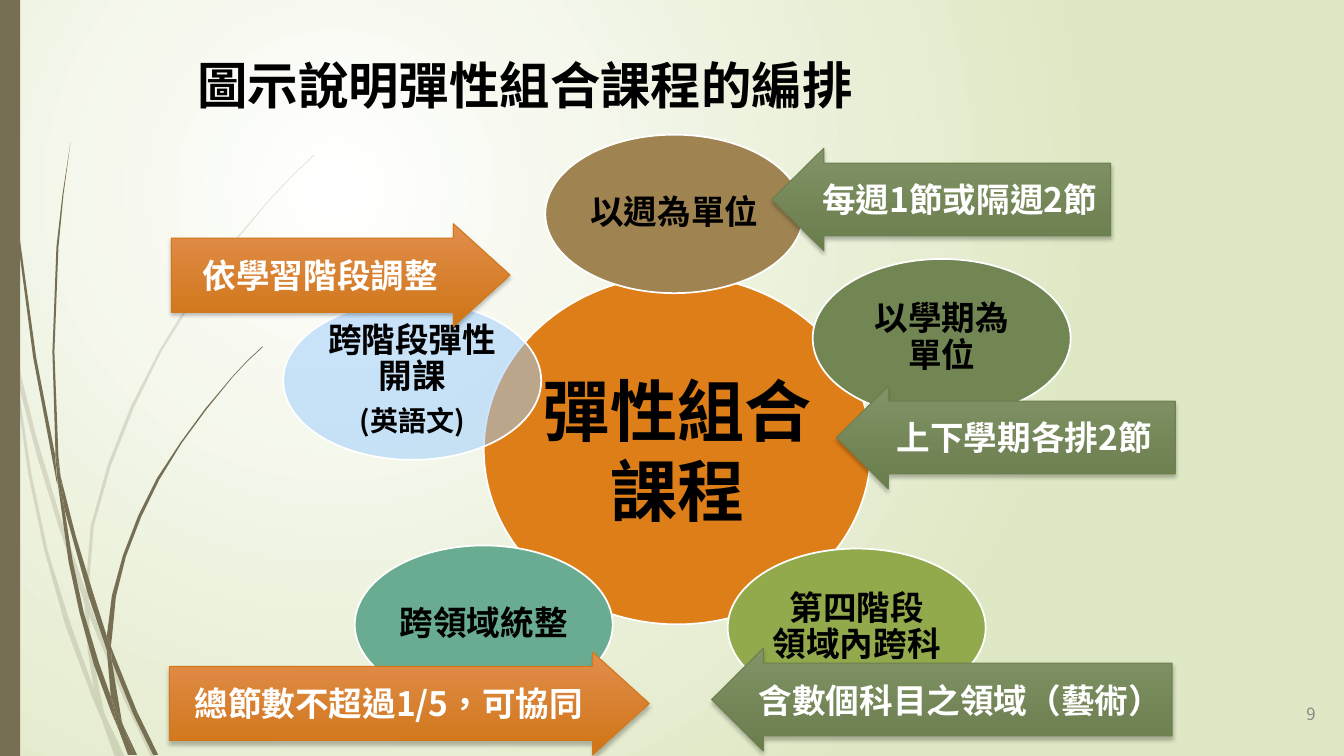
"""Build the slide on how flexible combined courses are arranged."""
from dataclasses import dataclass

from lxml import etree
from pptx import Presentation
from pptx.dml.color import RGBColor
from pptx.enum.shapes import MSO_SHAPE
from pptx.enum.text import MSO_ANCHOR, PP_ALIGN
from pptx.oxml import parse_xml
from pptx.oxml.ns import nsdecls, qn
from pptx.util import Pt

OVAL, RECT = MSO_SHAPE.OVAL, MSO_SHAPE.RECTANGLE
LEFT, RIGHT = MSO_SHAPE.LEFT_ARROW, MSO_SHAPE.RIGHT_ARROW
MID, TOP = MSO_ANCHOR.MIDDLE, MSO_ANCHOR.TOP
START, CENTER, END = PP_ALIGN.LEFT, PP_ALIGN.CENTER, PP_ALIGN.RIGHT
FONT = "Noto Sans CJK SC"
BLACK, WHITE, GREY, BARK = "000000", "FFFFFF", "888888", "766F54"
UNIT = Pt(0.72)

PALE = (
    (11, 350, 9, 322, 0, 282, 0, 299, 10, 344),
    (58, 522, 84, 599, 85, 586, 62, 520, 36, 433, 14, 345, 17, 376, 36, 450),
    (92, 607, 88, 596, 88, 610, 123, 694, 150, 751, 155, 751, 127, 692),
    (119, 751, 124, 751, 105, 711),
    (93, 683, 70, 619, 47, 545, 31, 469, 17, 376, 11, 350, 28, 470, 44, 546,
     65, 621, 92, 693, 101, 714, 99, 707),
    (84, 599, 87, 646, 93, 683, 96, 692, 105, 711, 103, 706, 91, 646, 88, 610, 88, 608),
    (88, 584, 93, 522, 110, 462, 133, 404, 160, 349, 193, 296, 229, 245, 268, 198,
     290, 175, 312, 154, 312, 153, 289, 175, 268, 197, 228, 244, 191, 294, 158, 348,
     130, 403, 107, 461, 90, 522, 85, 584, 85, 586, 88, 596),
    (101, 714, 114, 751, 119, 751),
    (88, 608, 88, 610, 88, 596, 85, 586, 84, 599),
    (96, 692, 93, 683, 99, 707, 101, 714, 119, 751, 105, 711),
)
DARK = (
    (7, 110, 17, 233, 33, 355, 56, 477, 57, 481, 55, 457, 55, 453, 36, 355, 19, 232,
     8, 109, 5, 48, 4, 0, 3, 0, 4, 48),
    (88, 592, 106, 645, 106, 633, 106, 631, 93, 590, 75, 531, 60, 472, 64, 505),
    (113, 649, 110, 641, 111, 656, 132, 708, 152, 749, 157, 749, 136, 706),
    (110, 691, 98, 657, 83, 607, 72, 556, 64, 505, 57, 477, 68, 557, 79, 608,
     93, 659, 111, 708, 117, 722, 116, 717),
    (60, 472, 58, 453, 54, 349, 58, 245, 63, 193, 70, 141, 62, 193, 56, 245,
     52, 349, 55, 449, 60, 472),
    (133, 749, 136, 749, 122, 719),
    (57, 477, 64, 505, 60, 472, 55, 449, 55, 453),
    (111, 633, 115, 592, 125, 552, 140, 513, 158, 476, 180, 440, 205, 406, 231, 374,
     245, 359, 261, 344, 260, 344, 245, 358, 231, 373, 204, 405, 179, 439, 156, 474,
     137, 512, 122, 551, 111, 591, 106, 631, 110, 641),
    (117, 722, 127, 749, 131, 749),
    (106, 645, 110, 691, 116, 706, 122, 719, 121, 716, 111, 656, 109, 651),
    (106, 645, 109, 651, 111, 656, 110, 641, 106, 631, 106, 633),
    (116, 706, 110, 691, 116, 717, 117, 722, 130, 749, 133, 749, 122, 719),
)


@dataclass
class Line:
    text: str
    size: float = 24


@dataclass
class Bubble:
    x: float
    y: float
    fill: str
    lines: tuple
    w: float = 184.3
    h: float = 113.2
    alpha: int = 100
    lead: float = 0.9


@dataclass
class Arrow:
    x: float
    y: float
    w: float
    kind: int
    text: str


BUBBLES = (
    Bubble(345.6, 196.6, "DE7E18", (Line("彈性組合課程", 48),), 276.5, 249.4, lead=1),
    Bubble(389.5, 96.2, "9F8351", (Line("以週為單位"),)),
    Bubble(580.5, 185, "728653", (Line("以學期為\v單位"),)),
    Bubble(519.8, 391.8, "92AA4C", (Line("第四階段\v領域內跨科"),)),
    Bubble(253.4, 389.6, "6AAC91", (Line("跨領域統整"),)),
    Bubble(202.3, 215.3, "99CCFF", (Line("跨階段彈性開課"), Line("(英語文)", 20)), alpha=50),
)
ARROWS = (
    Arrow(551.5, 105.8, 241.9, LEFT, "每週1節或隔週2節"),
    Arrow(597.6, 275.8, 241.9, LEFT, "上下學期各排2節"),
    Arrow(508.3, 463, 329, LEFT, "含數個科目之領域（藝術）"),
    Arrow(121, 465.8, 342.7, RIGHT, "總節數不超過1/5，可協同"),
    Arrow(122.4, 159.8, 241.9, RIGHT, "依學習階段調整"),
)
LOOKS = {
    LEFT: (("819367", "6A7D4D"), "6D804F", (0.708, 0.505)),
    RIGHT: (("E18D4C", "CF7516"), "D47817", (0.72, 0.551)),
}


def tint(color, code: str) -> None:
    """Set a colour from a hex string."""
    color.rgb = RGBColor.from_string(code)


def paint(shape, code: str, alpha: int = 100) -> None:
    """Fill a shape flat, with opacity in percent, and no shadow."""
    shape.shadow.inherit = False
    shape.fill.solid()
    tint(shape.fill.fore_color, code)
    if alpha < 100:
        node = shape._element.spPr.find(qn("a:solidFill"))[0]
        etree.SubElement(node, qn("a:alpha")).set("val", str(alpha * 1000))


def blend(fill, codes: tuple) -> None:
    """Fill with a gradient running down through two colours."""
    fill.gradient()
    fill.gradient_angle = 270
    for stop, code, place in zip(fill.gradient_stops, codes, (0, 1)):
        tint(stop.color, code)
        stop.position = place


def edge(shape, code: str, width: float) -> None:
    """Outline a shape."""
    tint(shape.line.color, code)
    shape.line.width = Pt(width)


def write(shape, lines: tuple, code: str, bold: bool = True, align=CENTER,
          anchor=MID, pad: tuple = (0, 0), lead: float = 1, gap: float = 0) -> None:
    """Write lines of text into a shape run by run."""
    frame = shape.text_frame
    frame.word_wrap, frame.vertical_anchor = True, anchor
    frame.margin_left = frame.margin_right = Pt(pad[0])
    frame.margin_top = frame.margin_bottom = Pt(pad[1])
    for i, line in enumerate(lines):
        para = frame.add_paragraph() if i else frame.paragraphs[0]
        para.alignment, para.line_spacing = align, lead
        if i < len(lines) - 1:
            para.space_after = Pt(gap)
        for j, part in enumerate(line.text.split("\v")):
            if j:
                para.add_line_break()
            run = para.add_run()
            run.text = part
            run.font.name, run.font.size, run.font.bold = FONT, Pt(line.size), bold
            tint(run.font.color, code)
            props = run._r.get_or_add_rPr()
            props.set("lang", "zh-TW")
            latin = props.find(qn("a:latin"))
            latin.addnext(parse_xml(f'<a:ea {nsdecls("a")} typeface="{FONT}"/>'))


def grow(shapes, blades: tuple, alpha: int) -> None:
    """Draw a tuft of grass as one group."""
    tuft = shapes.add_group_shape().shapes
    for blade in blades:
        dots = list(zip(blade[::2], blade[1::2]))
        pen = tuft.build_freeform(*dots[0], scale=UNIT)
        pen.add_line_segments(dots[1:], close=True)
        leaf = pen.convert_to_shape()
        paint(leaf, BARK, alpha)
        leaf.line.fill.background()


def place(shapes, kind: int, x: float, y: float, w: float, h: float):
    """Add a preset shape."""
    return shapes.add_shape(kind, Pt(x), Pt(y), Pt(w), Pt(h))


def point(shapes, arrow: Arrow) -> None:
    """Draw a block arrow with its soft shadow."""
    shape = place(shapes, arrow.kind, arrow.x, arrow.y, arrow.w, 73.4)
    codes, rim, bends = LOOKS[arrow.kind]
    for i, bend in enumerate(bends):
        shape.adjustments[i] = bend
    blend(shape.fill, codes)
    edge(shape, rim, 0.75)
    shape.shadow.inherit = False
    shape._element.spPr.find(qn("a:effectLst")).append(parse_xml(
        f'<a:outerShdw {nsdecls("a")} blurRad="{Pt(3)}" dist="{Pt(2)}" dir="5400000" '
        'rotWithShape="0"><a:srgbClr val="000000"><a:alpha val="25000"/></a:srgbClr>'
        '</a:outerShdw>'))
    write(shape, (Line(arrow.text),), WHITE, pad=(7.2, 3.6))


def main() -> None:
    """Build and save the slide."""
    deck = Presentation()
    deck.slide_width, deck.slide_height = Pt(960), Pt(540)
    slide = deck.slides.add_slide(deck.slide_layouts[6])
    shapes = slide.shapes
    blend(slide.background.fill, (WHITE, "DFE8C4"))
    lin = slide._element.find(".//" + qn("a:lin"))
    lin.getparent().replace(lin, parse_xml(
        f'<a:path {nsdecls("a")} path="circle"><a:fillToRect l="50000" t="50000" '
        'r="100000" b="100000"/></a:path>'))
    grow(shapes, PALE, 20)
    grow(shapes, DARK, 100)
    band = place(shapes, RECT, 0, 0, 14.4, 540)
    paint(band, BARK)
    band.line.fill.background()
    page = shapes.add_textbox(Pt(889.2), Pt(489.6), Pt(57.6), Pt(41))
    write(page, (Line("9", 12),), GREY, False, END, pad=(7.2, 7.2))
    for item in BUBBLES:
        shape = place(shapes, OVAL, item.x, item.y, item.w, item.h)
        paint(shape, item.fill, item.alpha)
        edge(shape, WHITE, 1.25)
        write(shape, item.lines, BLACK, lead=item.lead, gap=8.4)
    for arrow in ARROWS:
        point(shapes, arrow)
    title = shapes.add_textbox(Pt(133.9), Pt(31.7), Pt(671), Pt(60.5))
    write(title, (Line("圖示說明彈性組合課程的編排", 36),), BLACK, True, START, TOP, (7.2, 7.2))
    deck.save("out.pptx")


if __name__ == "__main__":
    main()
